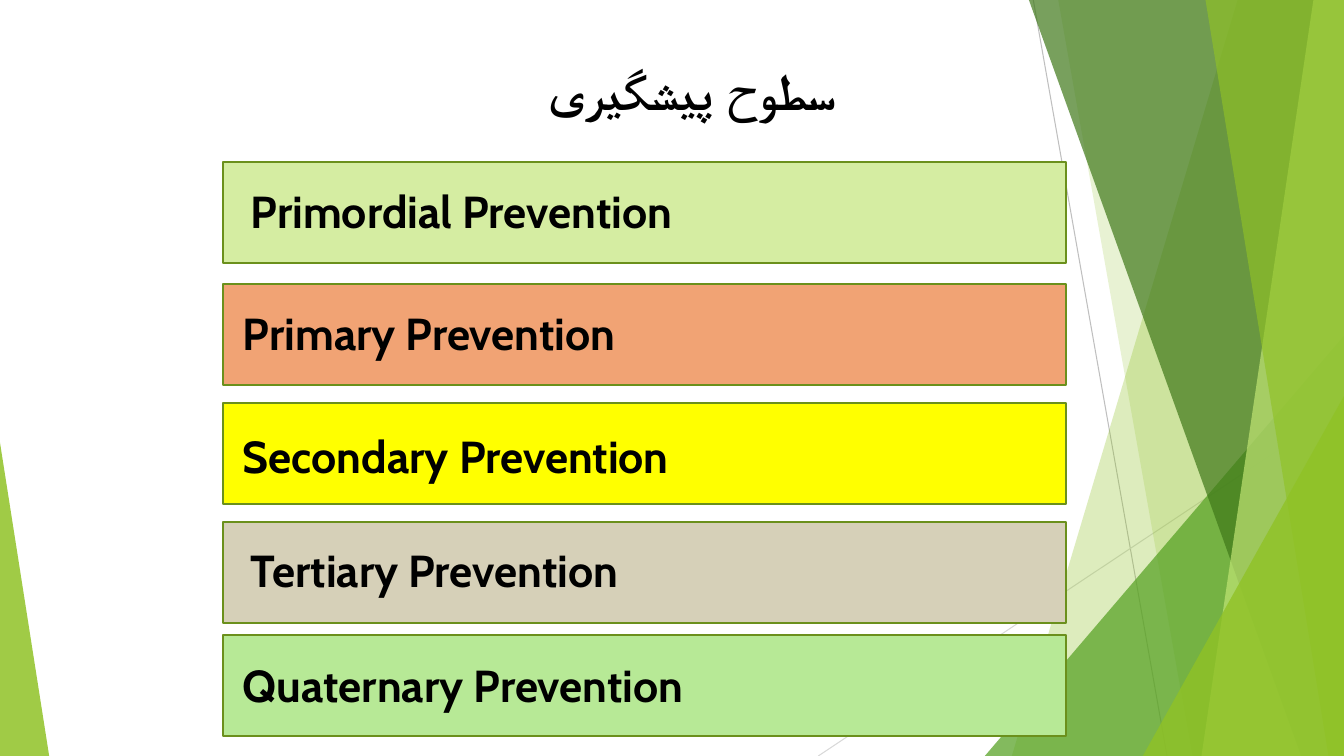
"""Build a slide listing the five levels of prevention beside green facets."""
from typing import NamedTuple

from lxml import etree
from pptx import Presentation
from pptx import util as u
from pptx.dml.color import RGBColor
from pptx.enum import shapes, text
from pptx.oxml.ns import qn
from pptx.shapes.autoshape import Shape
from pptx.slide import Slide

FONT = "Cabin"
BLACK = RGBColor(0x00, 0x00, 0x00)
SILVER = RGBColor(0xBF, 0xBF, 0xBF)
PALE_GREY = RGBColor(0xD9, 0xD9, 0xD9)
LIME = RGBColor(0x90, 0xC2, 0x26)
LIGHT_LIME = RGBColor(0xC0, 0xE4, 0x74)
GREEN = RGBColor(0x54, 0xA0, 0x21)
DARK_GREEN = RGBColor(0x3F, 0x78, 0x19)
OLIVE = RGBColor(0x6B, 0x90, 0x1C)
PALE_LIME = RGBColor(0xD5, 0xED, 0xA2)
ORANGE = RGBColor(0xF1, 0xA3, 0x74)
YELLOW = RGBColor(0xFF, 0xFF, 0x00)
BEIGE = RGBColor(0xD6, 0xD0, 0xB8)
MINT = RGBColor(0xB7, 0xE9, 0x96)

SLIDE_W, SLIDE_H = 33.87, 19.05
BAR_LEFT, BAR_W, BAR_H = 5.61, 21.26, 2.54
LABEL_W, LABEL_H = 20, 1.63


class Ray(NamedTuple):
    x1: float
    y1: float
    x2: float
    y2: float
    color: RGBColor


class Facet(NamedTuple):
    top_x: float
    bottom_x: float
    color: RGBColor
    opacity: int


class Corner(NamedTuple):
    left: float
    width: float
    height: float
    apex: float
    color: RGBColor
    opacity: int


class Level(NamedTuple):
    name: str
    color: RGBColor
    bar_top: float
    label_left: float
    label_top: float


RAYS = [
    Ray(26.04, 0, 29.41, SLIDE_H, SILVER),
    Ray(SLIDE_W, 10.24, 20.62, SLIDE_H, PALE_GREY),
]
BACKDROP = [
    Facet(31.19, 25.5, LIME, 30),
    Facet(26.67, 30.05, LIME, 20),
    Corner(24.82, 9.05, 10.59, 1, GREEN, 72),
    Facet(25.93, 32.79, DARK_GREEN, 70),
    Facet(33.1, 30.28, LIGHT_LIME, 70),
    Facet(30.38, 33.48, LIME, 65),
    Corner(28.8, 5.07, 9.07, 1, LIME, 80),
    Corner(0, 1.24, 7.9, 0, LIME, 85),
]
LEVELS = [
    Level("Primordial Prevention", PALE_LIME, 4.09, 6.07, 4.5),
    Level("Primary Prevention", ORANGE, 7.16, 5.87, 7.59),
    Level("Secondary Prevention", YELLOW, 10.16, 5.87, 10.69),
    Level("Tertiary Prevention", BEIGE, 13.16, 6.07, 13.54),
    Level("Quaternary Prevention", MINT, 16, 5.87, 16.46),
]


def paint(sp: Shape, color: RGBColor, opacity: int = 100) -> None:
    sp.shadow.inherit = False
    sp.fill.solid()
    sp.fill.fore_color.rgb = color
    if opacity < 100:
        clr = sp._element.spPr.find(qn("a:solidFill")).find(qn("a:srgbClr"))
        etree.SubElement(clr, qn("a:alpha")).set("val", str(opacity * 1000))


def write(sp: Shape, words: str, size: int, rtl: bool = False) -> None:
    tf = sp.text_frame
    tf.word_wrap = True
    tf.auto_size = text.MSO_AUTO_SIZE.SHAPE_TO_FIT_TEXT
    tf.vertical_anchor = text.MSO_ANCHOR.TOP
    p = tf.paragraphs[0]
    p.alignment = text.PP_ALIGN.CENTER if rtl else text.PP_ALIGN.LEFT
    if rtl:
        p._p.get_or_add_pPr().set("rtl", "1")
    r = p.add_run()
    r.text = words
    r.font.name, r.font.size, r.font.bold = FONT, u.Pt(size), True
    r.font.color.rgb = BLACK


def draw_ray(s: Slide, ray: Ray) -> None:
    ends = (u.Cm(v) for v in ray[:4])
    line = s.shapes.add_connector(shapes.MSO_CONNECTOR.STRAIGHT, *ends)
    line.line.color.rgb = ray.color
    line.line.width = u.Pt(0.75)
    etree.SubElement(line._element.spPr, qn("a:effectLst"))


def draw_facet(s: Slide, facet: Facet) -> None:
    fb = s.shapes.build_freeform(u.Cm(facet.top_x), 0)
    corners = [(SLIDE_W, 0), (SLIDE_W, SLIDE_H), (facet.bottom_x, SLIDE_H)]
    fb.add_line_segments([(u.Cm(x), u.Cm(y)) for x, y in corners], close=True)
    sp = fb.convert_to_shape()
    paint(sp, facet.color, facet.opacity)
    sp.line.fill.background()


def draw_corner(s: Slide, corner: Corner) -> None:
    sp = s.shapes.add_shape(
        shapes.MSO_SHAPE.ISOSCELES_TRIANGLE, u.Cm(corner.left),
        u.Cm(SLIDE_H - corner.height), u.Cm(corner.width), u.Cm(corner.height))
    sp.adjustments[0] = corner.apex
    paint(sp, corner.color, corner.opacity)
    sp.line.fill.background()


def draw_level(s: Slide, level: Level) -> None:
    bar = s.shapes.add_shape(
        shapes.MSO_SHAPE.RECTANGLE, u.Cm(BAR_LEFT), u.Cm(level.bar_top),
        u.Cm(BAR_W), u.Cm(BAR_H))
    paint(bar, level.color)
    bar.line.color.rgb = OLIVE
    bar.line.width = u.Pt(1.5)
    label = s.shapes.add_textbox(
        u.Cm(level.label_left), u.Cm(level.label_top), u.Cm(LABEL_W), u.Cm(LABEL_H))
    write(label, level.name, 32)


def main() -> None:
    prs = Presentation()
    prs.slide_width, prs.slide_height = u.Cm(SLIDE_W), u.Cm(SLIDE_H)
    s = prs.slides.add_slide(prs.slide_layouts.get_by_name("Title Only"))
    title = s.shapes.title
    title.left, title.top = u.Cm(6.53), u.Cm(1.4)
    title.width, title.height = u.Cm(21.51), u.Cm(1.8)
    write(title, "سطوح پیشگیری ", 36, rtl=True)
    for ray in RAYS:
        draw_ray(s, ray)
    for piece in BACKDROP:
        if isinstance(piece, Facet):
            draw_facet(s, piece)
        else:
            draw_corner(s, piece)
    for level in LEVELS:
        draw_level(s, level)
    prs.save("out.pptx")


if __name__ == "__main__":
    main()
